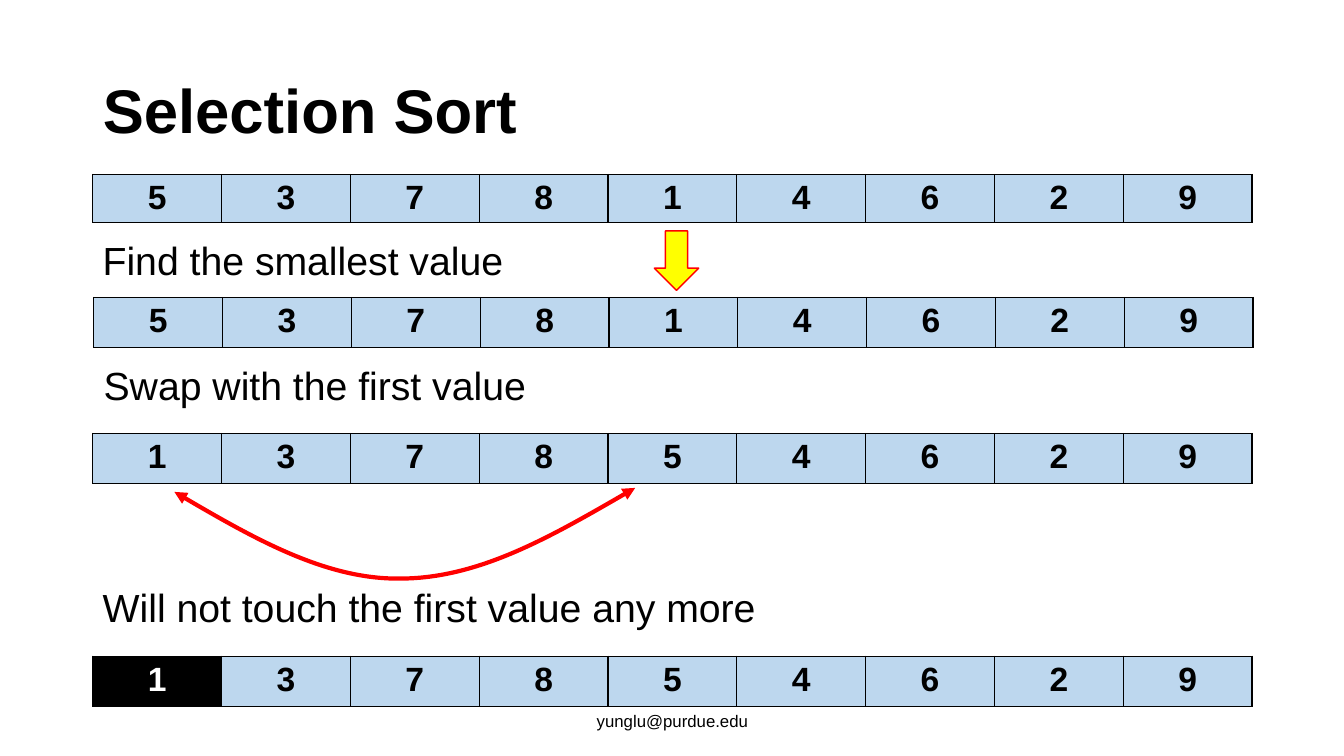
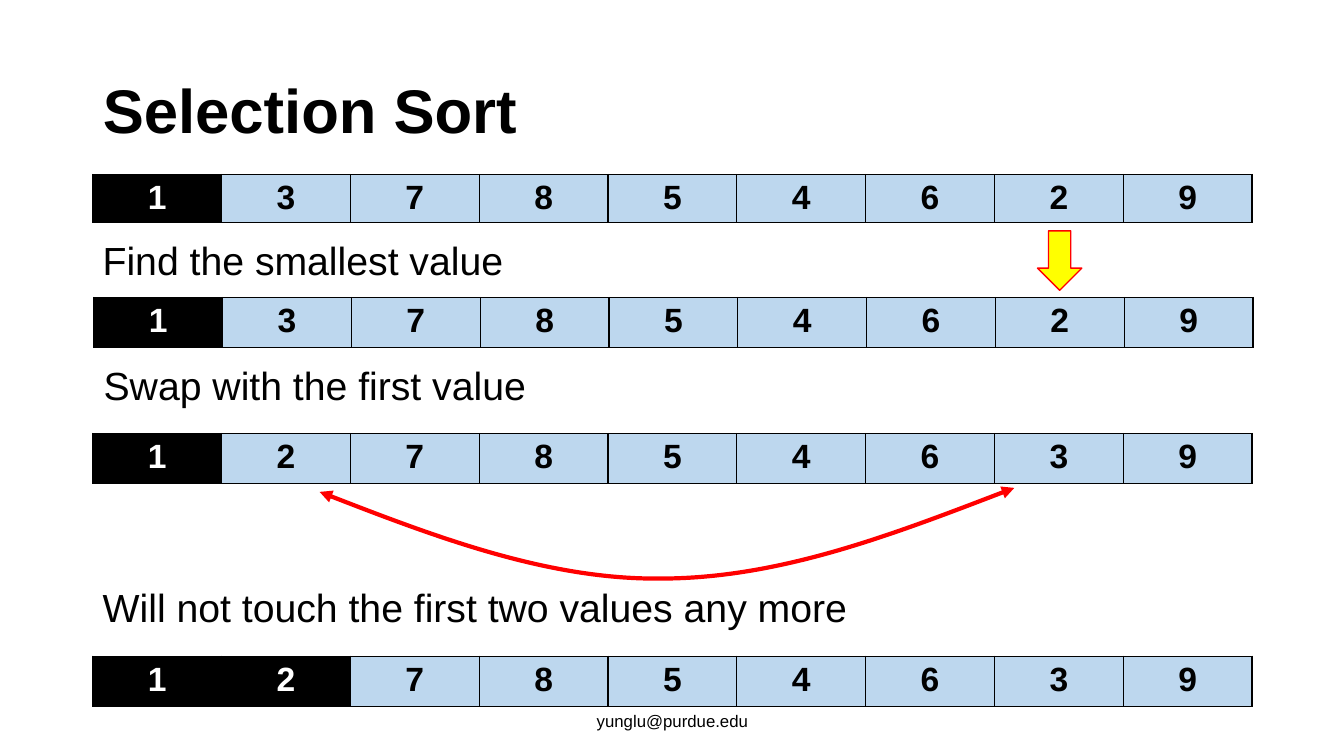
from pptx import Presentation
from pptx.dml.color import RGBColor
from pptx.enum.shapes import MSO_SHAPE
from pptx.enum.text import MSO_ANCHOR, MSO_AUTO_SIZE, PP_ALIGN
from pptx.oxml.ns import qn
from pptx.util import Inches, Pt
from lxml.etree import SubElement

# Shared style
FONT = "Arial"
BLACK, WHITE, BLUE = "000000", "FFFFFF", "BDD7EE"
YELLOW, RED = "FFFF00", "FF0000"
LEFT, WIDTH = 0.92, 11.5
CURVE_STEPS = [(0.16, 5.31), (0.33, 5.75), (0.49, 5.74),
               (0.66, 5.74), (0.83, 5.29), (1, 4.84)]


def color(hex_code):
    return RGBColor.from_string(hex_code)


def lengths(*values):
    return [Inches(value) for value in values]


def write(frame, text, size=28, ink=BLACK, bold=False, align=PP_ALIGN.LEFT, spacing=None):
    para = frame.paragraphs[0]
    para.alignment = align
    if spacing:
        para.line_spacing = spacing
    span = para.add_run()
    span.text = text
    span.font.name = FONT
    span.font.size = Pt(size)
    span.font.bold = bold
    span.font.color.rgb = color(ink)


def add_text(page, text, left, top, width, height=0.57, wrap=False,
             anchor=MSO_ANCHOR.TOP, **style):
    frame = page.shapes.add_textbox(*lengths(left, top, width, height)).text_frame
    frame.word_wrap = wrap
    frame.vertical_anchor = anchor
    write(frame, text, **style)


def add_borders(cell):
    properties = cell._tc.get_or_add_tcPr()
    for side in ("a:lnL", "a:lnR", "a:lnT", "a:lnB"):
        border = SubElement(properties, qn(side), w=str(Pt(1)))
        fill = SubElement(border, qn("a:solidFill"))
        SubElement(fill, qn("a:srgbClr"), val=BLACK)


def add_array(page, values, top, done, left=LEFT, height=0.5):
    """Draw the values as one table row, the first `done` cells in black."""
    frame = page.shapes.add_table(1, len(values), *lengths(left, top, WIDTH, height))
    table = frame.table
    table.first_row = table.horz_banding = False
    for index, value in enumerate(values):
        cell = table.cell(0, index)
        add_borders(cell)
        cell.fill.solid()
        cell.fill.fore_color.rgb = color(BLACK if index < done else BLUE)
        write(cell.text_frame, str(value), size=24, bold=True,
              ink=WHITE if index < done else BLACK, align=PP_ALIGN.CENTER)


def add_pointer(page, left):
    arrow = page.shapes.add_shape(MSO_SHAPE.DOWN_ARROW, *lengths(left, 2.29, 0.44, 0.59))
    arrow.shadow.inherit = False
    arrow.fill.solid()
    arrow.fill.fore_color.rgb = color(YELLOW)
    arrow.line.color.rgb = color(RED)
    arrow.line.width = Pt(1)


def add_swap_curve(page, start, end):
    builder = page.shapes.build_freeform(*lengths(start, 4.88))
    builder.add_line_segments(
        [lengths(start + (end - start) * share, y) for share, y in CURVE_STEPS], close=False)
    curve = builder.convert_to_shape()
    curve.shadow.inherit = False
    curve.fill.background()
    curve.line.color.rgb = color(RED)
    curve.line.width = Pt(3)
    # Each three segment ends become the points of one Bezier curve
    segments = list(curve._element.iter(qn("a:lnTo")))
    outline = segments[0].getparent()
    for first in range(0, len(segments), 3):
        bezier = SubElement(outline, qn("a:cubicBezTo"))
        for segment in segments[first:first + 3]:
            bezier.append(segment[0])
            outline.remove(segment)
    line = curve.line._get_or_add_ln()
    for tip in ("a:headEnd", "a:tailEnd"):
        SubElement(line, qn(tip), type="triangle")


def add_step_page(deck, layout, values, done, pointer, curve, closing, closing_width):
    """Show one selection step and return the values after its swap."""
    page = deck.slides.add_slide(layout)
    title = page.shapes.title.text_frame
    title.auto_size = MSO_AUTO_SIZE.NONE
    title.vertical_anchor = MSO_ANCHOR.MIDDLE
    write(title, "Selection Sort", size=44, bold=True, spacing=0.9)

    # Find the smallest value
    add_array(page, values, 1.73, done, height=0.48)
    add_text(page, "Find the smallest value", LEFT, 2.3, 4.23)
    add_pointer(page, pointer)
    add_array(page, values, 2.95, done, left=0.93)

    # Swap it to the front of the unsorted part
    smallest = values.index(min(values[done:]))
    swapped = list(values)
    swapped[done], swapped[smallest] = values[smallest], values[done]
    add_text(page, "Swap with the first value", 0.93, 3.54, 4.44)
    add_array(page, swapped, 4.3, done)
    add_swap_curve(page, *curve)

    # Result and footer
    add_text(page, closing, LEFT, 5.74, closing_width)
    add_array(page, swapped, 6.51, done + 1)
    add_text(page, "yunglu@purdue.edu", 4.42, 6.95, 4.5, 0.4, wrap=True,
             anchor=MSO_ANCHOR.MIDDLE, size=12, align=PP_ALIGN.CENTER)
    return swapped


def main():
    deck = Presentation()
    deck.slide_width, deck.slide_height = lengths(13.33, 7.5)
    layout = deck.slide_layouts.get_by_name("Title Only")
    title = layout.placeholders[0]
    title.left, title.top, title.width, title.height = lengths(LEFT, 0.4, WIDTH, 1.45)

    values = [5, 3, 7, 8, 1, 4, 6, 2, 9]
    steps = [
        (6.49, (1.73, 6.3), "Will not touch the first value any more", 6.76),
        (10.29, (3.17, 10.06), "Will not touch the first two values any more", 7.68),
    ]
    for done, step in enumerate(steps):
        values = add_step_page(deck, layout, values, done, *step)
    deck.save("out.pptx")


if __name__ == "__main__":
    main()
